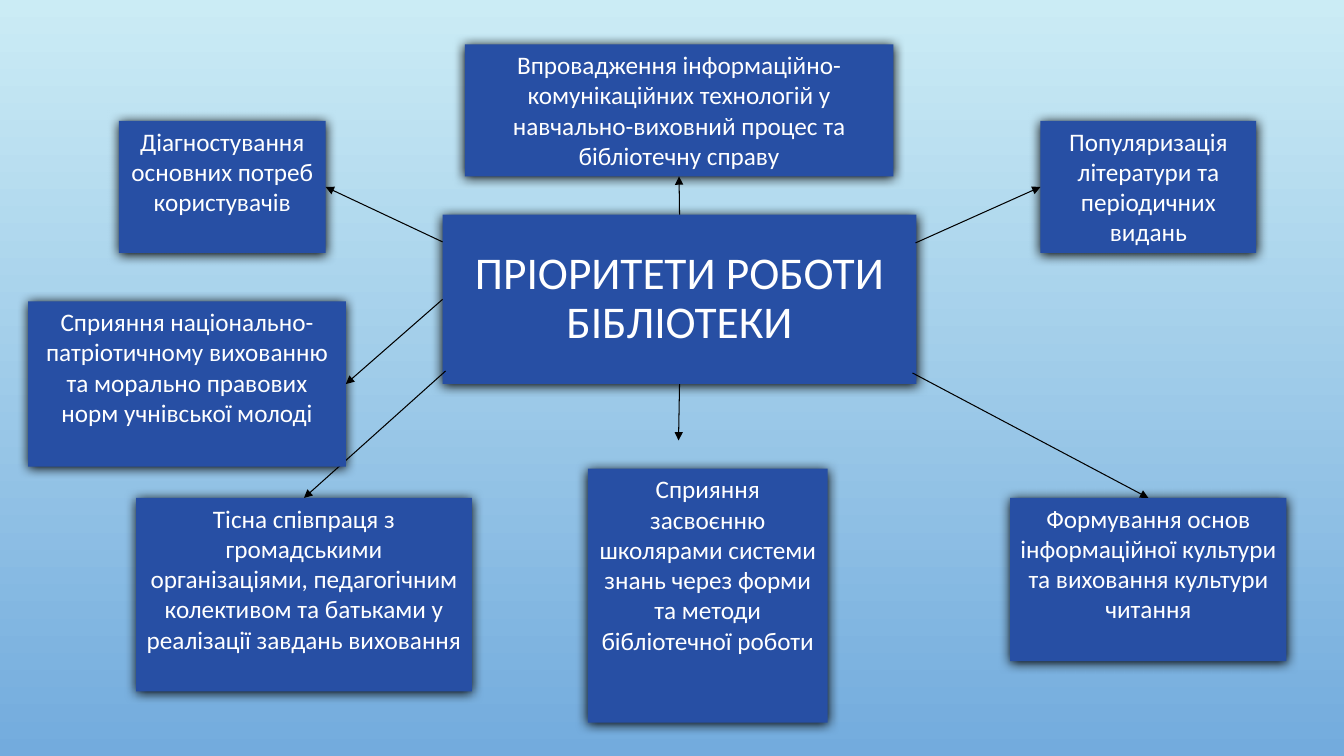
from dataclasses import dataclass

from lxml import etree
from pptx import Presentation
from pptx.dml.color import RGBColor
from pptx.enum.shapes import MSO_CONNECTOR, MSO_SHAPE
from pptx.enum.text import MSO_ANCHOR, MSO_AUTO_SIZE, PP_ALIGN
from pptx.oxml import parse_xml
from pptx.oxml.ns import nsdecls, qn
from pptx.shapes.autoshape import Shape
from pptx.slide import Slide
from pptx.util import Inches, Pt

RECTANGLE = MSO_SHAPE.RECTANGLE
STRAIGHT = MSO_CONNECTOR.STRAIGHT
CENTER = PP_ALIGN.CENTER
TOP_ANCHOR, MIDDLE_ANCHOR = MSO_ANCHOR.TOP, MSO_ANCHOR.MIDDLE
NO_AUTOFIT = MSO_AUTO_SIZE.NONE

TOP, LEFT, BOTTOM, RIGHT = range(4)
FONT = "Calibri"
BOX_BLUE, WHITE, BLACK = "274FA4", "FFFFFF", "000000"
SKY = ("CBECF5", "73ABDD")

Point = tuple[float, float]
Joint = int | Point  # a side of a box, or a free point


@dataclass(frozen=True)
class Priority:
    text: str
    left: float
    top: float
    width: float
    height: float
    arrow_start: Joint
    arrow_end: Joint


HEADING = "ПРІОРИТЕТИ РОБОТИ БІБЛІОТЕКИ"
PRIORITIES = [
    Priority("Діагностування основних потреб користувачів",
             1.18, 1.2, 2.05, 1.31, (4.39, 2.4), RIGHT),
    Priority("Тісна співпраця з громадськими організаціями, педагогічним "
             "колективом та батьками у реалізації завдань виховання",
             1.35, 4.94, 3.33, 1.92, (4.42, 3.68), TOP),
    Priority("Сприяння засвоєнню школярами системи знань через форми та методи "
             "бібліотечної роботи",
             5.83, 4.65, 2.38, 2.52, BOTTOM, (6.73, 4.37)),
    Priority("Популяризація літератури та періодичних видань",
             10.32, 1.2, 2.14, 1.31, (9.08, 2.41), LEFT),
    Priority("Формування основ інформаційної культури та виховання культури читання",
             10.02, 4.94, 2.74, 1.62, (9.05, 3.7), TOP),
    Priority("Впровадження інформаційно-комунікаційних технологій у "
             "навчально-виховний процес та бібліотечну справу",
             4.61, 0.44, 4.25, 1.31, TOP, BOTTOM),
    Priority("Сприяння національно-патріотичному вихованню та морально правових "
             "норм учнівської молоді",
             0.28, 2.99, 3.15, 1.64, LEFT, RIGHT),
]


def color(value: str) -> RGBColor:
    return RGBColor.from_string(value)


def paint_background(page: Slide) -> None:
    fill = page.background.fill
    fill.gradient()
    fill.gradient_angle = 270
    for stop, value in zip(fill.gradient_stops, SKY):
        stop.color.rgb = color(value)


def style_box(box: Shape) -> None:
    """Give the box its blue fill and soft shadow, without an outline."""
    box.fill.solid()
    box.fill.fore_color.rgb = color(BOX_BLUE)
    box.line.fill.background()
    box.shadow.inherit = False
    effects = box._element.spPr.find(qn("a:effectLst"))
    effects.append(parse_xml(
        f'<a:outerShdw {nsdecls("a")} blurRad="{Pt(8.5)}" dist="{Pt(1)}" '
        f'dir="5400000" algn="ctr" rotWithShape="0">'
        f'<a:srgbClr val="{BLACK}"/></a:outerShdw>'))


def write(box: Shape, text: str, *, size: float = 18,
          anchor: MSO_ANCHOR = TOP_ANCHOR, line_spacing: float = 1.0) -> None:
    frame = box.text_frame
    frame.word_wrap = True
    frame.auto_size = NO_AUTOFIT
    frame.vertical_anchor = anchor
    para = frame.paragraphs[0]
    para.alignment = CENTER
    para.line_spacing = line_spacing
    span = para.add_run()
    span.text = text
    span.font.name = FONT
    span.font.size = Pt(size)
    span.font.color.rgb = color(WHITE)


def add_heading(page: Slide) -> Shape:
    heading = page.shapes.title
    heading.left, heading.top = Inches(4.39), Inches(2.13)
    heading.width, heading.height = Inches(4.7), Inches(1.68)
    style_box(heading)
    write(heading, HEADING, size=32.4, anchor=MIDDLE_ANCHOR, line_spacing=0.9)
    return heading


def add_box(page: Slide, priority: Priority) -> Shape:
    box = page.shapes.add_shape(
        RECTANGLE, Inches(priority.left), Inches(priority.top),
        Inches(priority.width), Inches(priority.height))
    style_box(box)
    write(box, priority.text)
    return box


def add_arrow(page: Slide, source: Shape, start: Joint,
              target: Shape, end: Joint) -> None:
    arrow = page.shapes.add_connector(STRAIGHT, 0, 0, 0, 0)
    if isinstance(start, int):
        arrow.begin_connect(source, start)
    else:
        arrow.begin_x, arrow.begin_y = map(Inches, start)
    if isinstance(end, int):
        arrow.end_connect(target, end)
    else:
        arrow.end_x, arrow.end_y = map(Inches, end)
    arrow.line.color.rgb = color(BLACK)
    arrow.line.width = Pt(0.75)
    properties = arrow._element.spPr
    etree.SubElement(properties.find(qn("a:ln")), qn("a:tailEnd"), type="triangle")
    etree.SubElement(properties, qn("a:effectLst"))


def main() -> None:
    deck = Presentation()
    deck.slide_width, deck.slide_height = Inches(13.33), Inches(7.5)
    page = deck.slides.add_slide(deck.slide_layouts.get_by_name("Title Only"))
    paint_background(page)
    heading = add_heading(page)
    for priority in PRIORITIES:
        box = add_box(page, priority)
        add_arrow(page, heading, priority.arrow_start, box, priority.arrow_end)
    deck.save("out.pptx")


if __name__ == "__main__":
    main()
